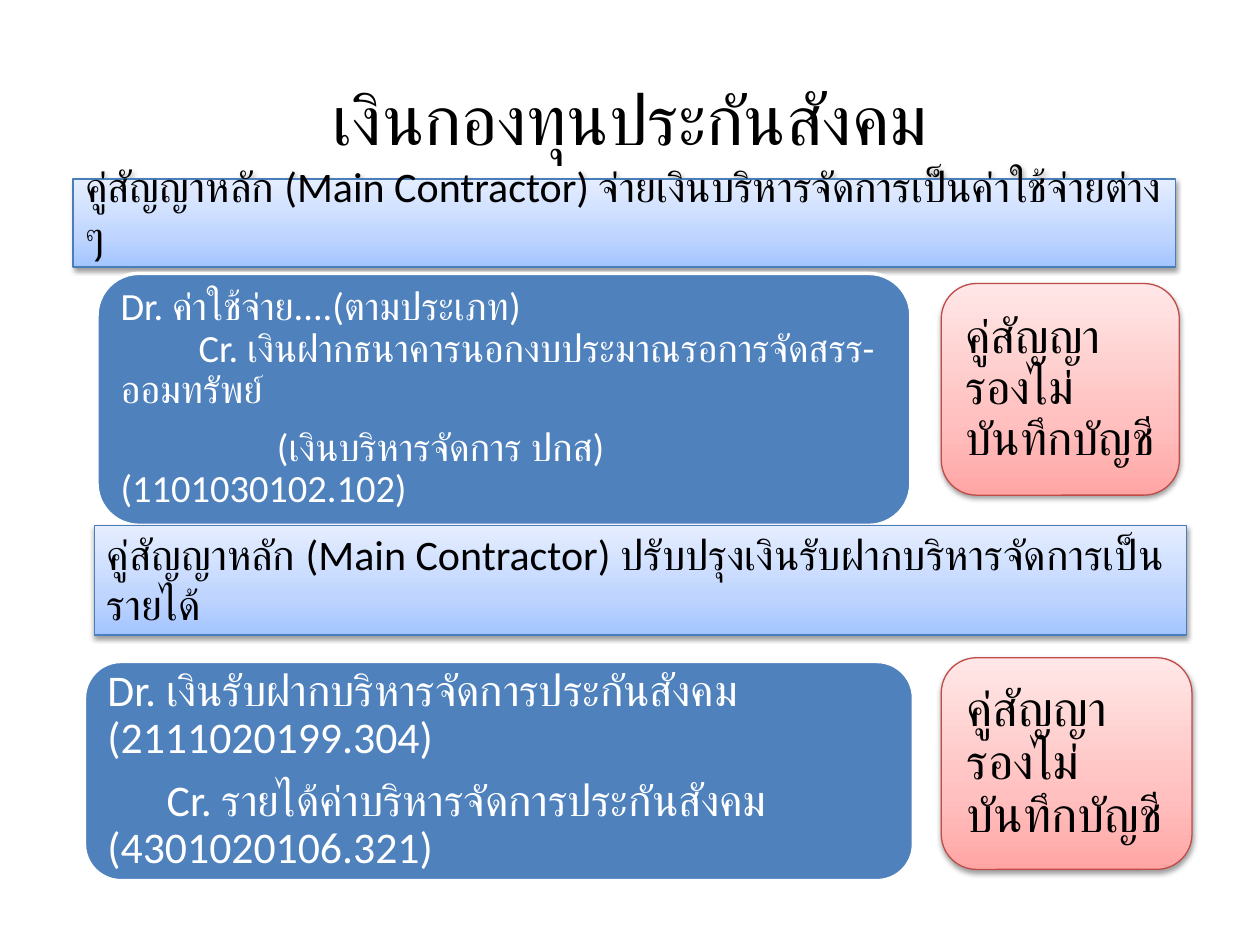
from copy import deepcopy
from dataclasses import dataclass

from lxml.etree import SubElement
from pptx import Presentation
from pptx.dml.color import RGBColor
from pptx.enum.shapes import MSO_SHAPE as Shape
from pptx.enum.text import MSO_ANCHOR as Anchor, PP_ALIGN as Align
from pptx.oxml.ns import qn
from pptx.util import Inches, Pt


@dataclass(frozen=True)
class Theme:
    font: str = "Calibri"
    black: str = "000000"
    white: str = "FFFFFF"
    entry_fill: str = "4F81BD"
    bar_stops: tuple = ((0, "A3C4FF"), (0.35, "BFD5FF"), (1, "E5EEFF"))
    bar_line: str = "4A7EBB"
    note_stops: tuple = ((0, "FFA6A5"), (0.35, "FFC0BF"), (1, "FFE7E7"))
    note_line: str = "BF4C48"
    title_size: int = 40
    bar_size: int = 24
    paragraph_gap: int = 9


THEME = Theme()


def rgb(value):
    return RGBColor.from_string(value)


def style_paragraph(para, size, color, align=Align.LEFT):
    para.alignment = align
    para.font.name = THEME.font
    para.font.size = Pt(size)
    para.font.color.rgb = rgb(color)


def add_panel(page, kind, box, line, line_width):
    shape = page.shapes.add_shape(kind, *map(Inches, box))
    shape.shadow.inherit = False
    shape.line.color.rgb = rgb(line)
    shape.line.width = Pt(line_width)
    return shape


def fill_gradient(shape, stops):
    """Fill from bottom to top with any number of colour stops."""
    shape.fill.gradient()
    shape.fill.gradient_angle = 90
    stop_list = shape._element.spPr.find(".//" + qn("a:gsLst"))
    while len(stop_list) < len(stops):
        stop_list.append(deepcopy(stop_list[-1]))
    for stop, (position, color) in zip(shape.fill.gradient_stops, stops):
        stop.position = position
        stop.color.rgb = rgb(color)


def add_soft_shadow(shape):
    effects = shape._element.spPr.find(qn("a:effectLst"))
    shadow = SubElement(effects, qn("a:outerShdw"), blurRad=str(Pt(3.1)),
                        dist=str(Pt(1.6)), dir="5400000", rotWithShape="0")
    color = SubElement(shadow, qn("a:srgbClr"), val=THEME.black)
    SubElement(color, qn("a:alpha"), val="38000")


def write_lines(shape, lines, size, color, inset, spacing=0.9):
    """Write (text, first-line indent, space after) lines into a shape."""
    frame = shape.text_frame
    frame.word_wrap = True
    frame.vertical_anchor = Anchor.MIDDLE
    frame.margin_left = frame.margin_right = Inches(inset)
    frame.margin_top = frame.margin_bottom = Inches(inset)
    for number, (text, indent, gap) in enumerate(lines):
        para = frame.add_paragraph() if number else frame.paragraphs[0]
        para.text = text
        para.line_spacing = spacing
        para.space_after = Pt(gap)
        para._p.get_or_add_pPr().set("indent", str(Inches(indent)))
        style_paragraph(para, size, color)


def set_title(page, box, text):
    title = page.shapes.title
    title.left, title.top, title.width, title.height = map(Inches, box)
    title.text_frame.text = text
    title.text_frame.vertical_anchor = Anchor.MIDDLE
    style_paragraph(title.text_frame.paragraphs[0], THEME.title_size,
                    THEME.black, Align.CENTER)


def add_heading_bar(page, box, text):
    bar = add_panel(page, Shape.RECTANGLE, box, THEME.bar_line, 0.75)
    fill_gradient(bar, THEME.bar_stops)
    add_soft_shadow(bar)
    write_lines(bar, [(text, 0, 0)], THEME.bar_size, THEME.black, 0.1, 1)
    frame = bar.text_frame
    frame.margin_top = frame.margin_bottom = Inches(0.05)
    frame.vertical_anchor = Anchor.BOTTOM


def add_journal_entry(page, box, lines, size, inset):
    entry = add_panel(page, Shape.ROUNDED_RECTANGLE, box, THEME.white, 2)
    entry.fill.solid()
    entry.fill.fore_color.rgb = rgb(THEME.entry_fill)
    write_lines(entry, lines, size, THEME.white, inset)


def add_side_note(page, box, text, size, inset):
    note = add_panel(page, Shape.ROUNDED_RECTANGLE, box, THEME.note_line, 0.75)
    fill_gradient(note, THEME.note_stops)
    add_soft_shadow(note)
    write_lines(note, [(text, 0, THEME.paragraph_gap)], size, THEME.black, inset)


def main():
    deck = Presentation()
    deck.slide_width, deck.slide_height = Inches(10), Inches(7.5)
    page = deck.slides.add_slide(deck.slide_layouts[5])
    gap = THEME.paragraph_gap
    note_text = "คู่สัญญารองไม่บันทึกบัญชี"

    set_title(page, (0.5, 0.31, 9, 1.25), "เงินกองทุนประกันสังคม")

    add_heading_bar(page, (0.58, 1.42, 8.75, 0.7),
                    "คู่สัญญาหลัก (Main Contractor) จ่ายเงินบริหารจัดการเป็นค่าใช้จ่ายต่าง ๆ")
    add_journal_entry(page, (0.77, 2.17, 6.46, 2), [
        ("Dr. ค่าใช้จ่าย....(ตามประเภท)", 0, 0),
        ("Cr. เงินฝากธนาคารนอกงบประมาณรอการจัดสรร-ออมทรัพย์", 0.62, gap),
        ("(เงินบริหารจัดการ ปกส) (1101030102.102)", 1.24, gap),
    ], 22, 0.09)
    add_side_note(page, (7.47, 2.25, 1.89, 1.68), note_text, 27, 0.11)

    add_heading_bar(page, (0.75, 4.17, 8.67, 0.87),
                    "คู่สัญญาหลัก (Main Contractor) ปรับปรุงเงินรับฝากบริหารจัดการเป็นรายได้")
    add_journal_entry(page, (0.67, 5.25, 6.58, 1.74), [
        ("Dr. เงินรับฝากบริหารจัดการประกันสังคม (2111020199.304)", 0, gap),
        ("Cr. รายได้ค่าบริหารจัดการประกันสังคม (4301020106.321)", 0.47, gap),
    ], 25, 0.1)
    add_side_note(page, (7.47, 5.22, 1.99, 1.68), note_text, 28, 0.12)

    deck.save("out.pptx")


if __name__ == "__main__":
    main()
